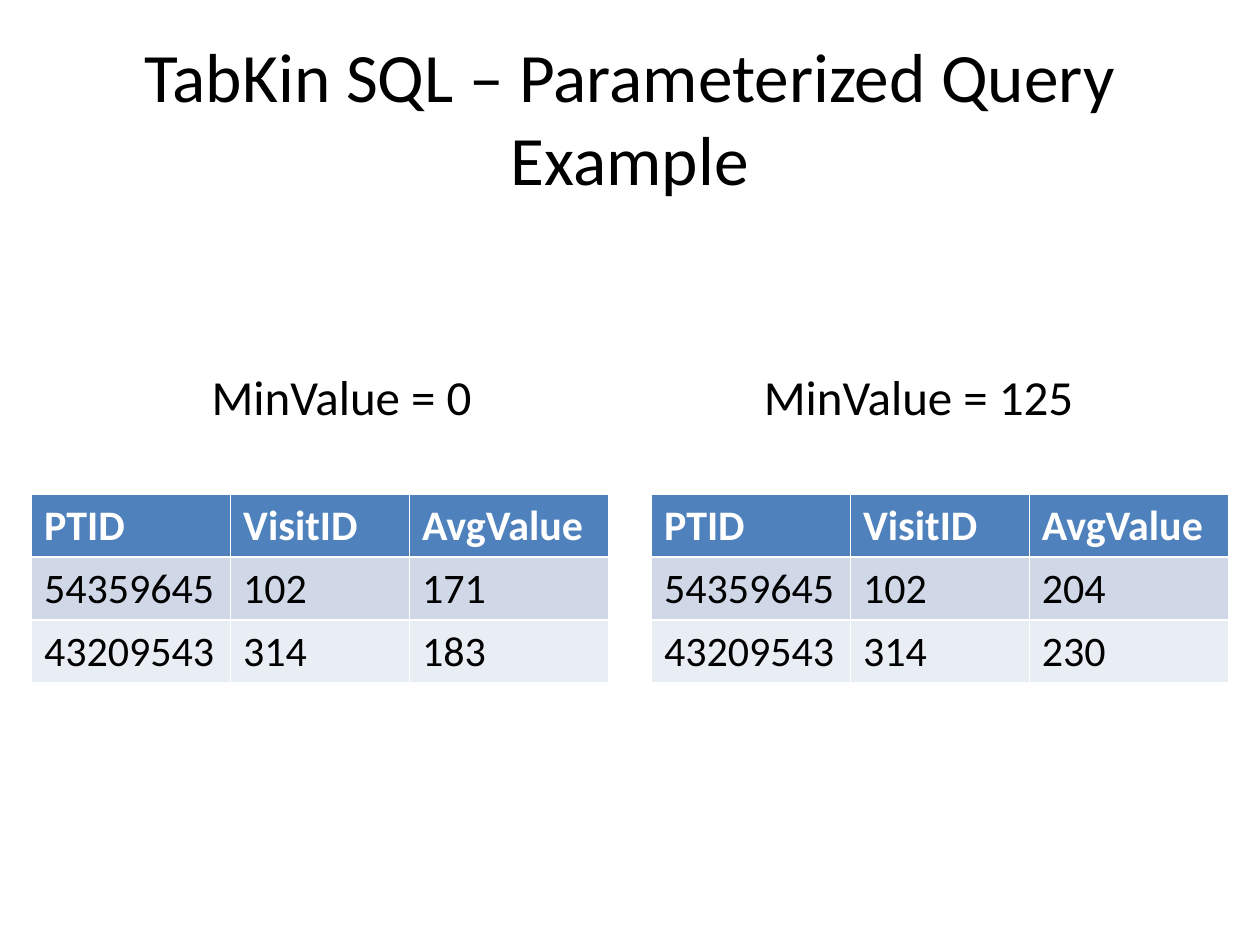
from pptx import Presentation
from pptx.dml.color import RGBColor
from pptx.enum.text import MSO_ANCHOR, MSO_AUTO_SIZE, PP_ALIGN
from pptx.util import Inches, Pt

FONT = "Calibri"
BLACK = RGBColor(0x00, 0x00, 0x00)
WHITE = RGBColor(0xFF, 0xFF, 0xFF)
HEADER_BLUE = RGBColor(0x4F, 0x81, 0xBD)
BANDS = (RGBColor(0xD0, 0xD8, 0xE8), RGBColor(0xE9, 0xED, 0xF4))

PAGE_WIDTH, PAGE_HEIGHT = 10, 7.5
MARGIN = 0.5
CAPTION_WIDTH = 4.42
TABLE_MARGIN = 0.25
COLUMN_WIDTHS = (1.58, 1.42, 1.58)
ROW_HEIGHT = 0.5

HEADERS = ("PTID", "VisitID", "AvgValue")
RESULTS = (
    ("MinValue = 0", (("54359645", "102", "171"), ("43209543", "314", "183"))),
    ("MinValue = 125", (("54359645", "102", "204"), ("43209543", "314", "230"))),
)


def style_paragraph(para, size, color=BLACK, bold=False, align=PP_ALIGN.LEFT):
    para.alignment = align
    font = para.font
    font.name, font.size, font.bold = FONT, Pt(size), bold
    font.color.rgb = color


def side_left(side, width, margin):
    """Left edge of the left (0) or right (1) item, mirrored about the centre."""
    return PAGE_WIDTH - margin - width if side else margin


def set_title(page, text):
    title = page.shapes.title
    title.left, title.top = Inches(MARGIN), Inches(0.3)
    title.width, title.height = Inches(PAGE_WIDTH - 2 * MARGIN), Inches(1.25)
    frame = title.text_frame
    frame.text = text
    frame.auto_size = MSO_AUTO_SIZE.NONE
    frame.vertical_anchor = MSO_ANCHOR.MIDDLE
    style_paragraph(frame.paragraphs[0], 39.6, align=PP_ALIGN.CENTER)


def add_caption(page, side, text):
    left = side_left(side, CAPTION_WIDTH, MARGIN)
    box = page.shapes.add_textbox(
        Inches(left), Inches(1.75), Inches(CAPTION_WIDTH), Inches(4.95))
    frame = box.text_frame
    frame.word_wrap = True
    frame.margin_top = Inches(1.16)
    frame.text = text
    style_paragraph(frame.paragraphs[0], 28, align=PP_ALIGN.CENTER)


def add_result_table(page, side, records):
    rows = (HEADERS, *records)
    width = sum(COLUMN_WIDTHS)
    left = side_left(side, width, TABLE_MARGIN)
    table = page.shapes.add_table(
        len(rows), len(HEADERS), Inches(left), Inches(3.92),
        Inches(width), Inches(ROW_HEIGHT * len(rows))).table
    for column, column_width in zip(table.columns, COLUMN_WIDTHS):
        column.width = Inches(column_width)
    for row_index, values in enumerate(rows):
        is_header = row_index == 0
        fill = HEADER_BLUE if is_header else BANDS[(row_index - 1) % 2]
        for column_index, value in enumerate(values):
            cell = table.cell(row_index, column_index)
            cell.text = value
            cell.fill.solid()
            cell.fill.fore_color.rgb = fill
            style_paragraph(cell.text_frame.paragraphs[0], 24,
                            WHITE if is_header else BLACK, is_header)


def main():
    deck = Presentation()
    deck.slide_width, deck.slide_height = Inches(PAGE_WIDTH), Inches(PAGE_HEIGHT)
    page = deck.slides.add_slide(deck.slide_layouts.get_by_name("Title Only"))
    set_title(page, "TabKin SQL – Parameterized Query Example")
    for side, (caption, records) in enumerate(RESULTS):
        add_caption(page, side, caption)
        add_result_table(page, side, records)
    deck.save("out.pptx")


if __name__ == "__main__":
    main()
